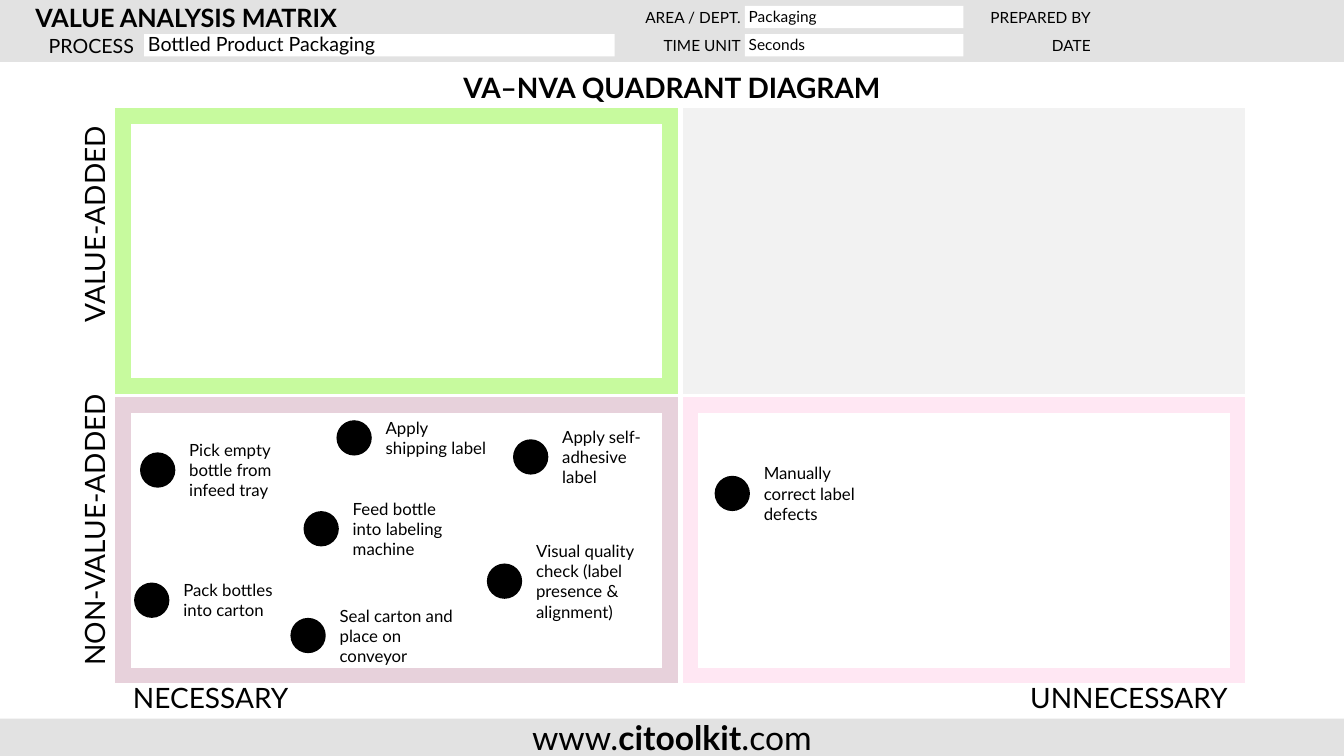
from dataclasses import dataclass

from lxml import etree
from pptx import Presentation
from pptx.dml.color import RGBColor
from pptx.enum import shapes, text
from pptx.oxml import ns
from pptx.util import Cm, Pt

LEFT, MID, RIGHT = text.PP_ALIGN.LEFT, text.PP_ALIGN.CENTER, text.PP_ALIGN.RIGHT
RECT, OVAL = shapes.MSO_SHAPE.RECTANGLE, shapes.MSO_SHAPE.OVAL


@dataclass(frozen=True)
class Theme:
    font: str = "Lato"
    ink: str = "000000"
    paper: str = "FFFFFF"
    band: str = "E2E2E2"
    green: str = "C7FA9E"
    mauve: str = "E7D1DB"
    gray: str = "F2F2F2"
    pink: str = "FFE7F3"
    small: int = 11
    note: int = 12
    body: int = 14
    title: int = 18
    head: int = 20
    site: int = 24
    edge: int = 11


T = Theme()
WIDE, HIGH = 33.87, 19.05
FLAT = (0.1, 0)
SNUG = (0.1, 0.1)
CELL_W, CELL_H = 13.79, 6.81
STEP_X, STEP_Y = 14.3, 7.29
DOT = 0.89
ROW = 1.12

STEPS = [
    ("Manually correct label defects", 14.91, 9.07, 2.9),
    ("Pack bottles into carton", 0.28, 11.76, 2.51),
    ("Pick empty bottle from infeed tray", 0.43, 8.48, 2.67),
    ("Feed bottle into labeling machine", 4.55, 9.96, 2.95),
    ("Seal carton and place on conveyor", 4.22, 12.65, 3.18),
    ("Visual quality check (label presence & alignment)", 9.17, 11.28, 3.43),
    ("Apply self-adhesive label", 9.83, 8.15, 2.67),
    ("Apply shipping label", 5.38, 7.67, 2.74),
]


def block(parts, kind, box, fill, edge=None):
    shape = parts.add_shape(kind, *map(Cm, box))
    shape.shadow.inherit = False
    shape.fill.solid()
    shape.fill.fore_color.rgb = RGBColor.from_string(fill)
    if edge:
        shape.line.color.rgb = RGBColor.from_string(edge)
        shape.line.width = Pt(T.edge)
        line = shape.element.spPr.find(ns.qn("a:ln"))
        etree.SubElement(line, ns.qn("a:miter")).set("lim", "800000")
    else:
        shape.line.fill.background()
    return shape


def write(parts, box, words, size, bold=False, align=LEFT, inset=(0.25, 0.13),
          turn=0, space=None):
    label = parts.add_textbox(*map(Cm, box))
    label.rotation = turn
    frame = label.text_frame
    frame.word_wrap = True
    frame.vertical_anchor = text.MSO_ANCHOR.MIDDLE
    frame.margin_left = frame.margin_right = Cm(inset[0])
    frame.margin_top = frame.margin_bottom = Cm(inset[1])
    para = frame.paragraphs[0]
    para.alignment = align
    if space:
        para.line_spacing = space
    runs = [(words, bold)] if isinstance(words, str) else words
    for word, heavy in runs:
        run = para.add_run()
        run.text = word
        run.font.name = T.font
        run.font.size = Pt(size)
        run.font.bold = heavy
        run.font.color.rgb = RGBColor.from_string(T.ink)
    return label


def header(parts, box):
    x, y = box[:2]
    block(parts, RECT, box, T.band)
    write(parts, (x + 0.79, y, 14.71, 0.86), "VALUE ANALYSIS MATRIX", T.title,
          bold=True, inset=SNUG)
    rows = (0.14, 0.85)
    fields = [
        ("PROCESS", "Bottled Product Packaging", 0.38, 1, 3.63, 11.86, T.body),
        ("AREA / DEPT.", "Packaging", 15.67, 0, 18.77, 5.51, T.small),
        ("TIME UNIT", "Seconds", 15.67, 1, 18.77, 5.51, T.small),
        ("PREPARED BY", "", 24.49, 0, 0, 0, T.small),
        ("DATE", "", 24.49, 1, 0, 0, T.small),
    ]
    for name, value, left, row, start, width, size in fields:
        top = y + rows[row]
        write(parts, (x + left, top, 3.1, 0.58), name, size,
              align=RIGHT, inset=SNUG)
        if value:
            slot = (x + start, top + 0.01, width, 0.56)
            block(parts, RECT, slot, T.paper)
            write(parts, slot, value, size, inset=SNUG, space=0.9)


def footer(parts, box):
    block(parts, RECT, box, T.band)
    write(parts, box, [("www.", False), ("citoolkit", True), (".com", False)],
          T.site, align=MID)


def upright(parts, mid, top, size, words, align):
    box = (mid - size / 2, top + (size - ROW) / 2, size, ROW)
    write(parts, box, words, T.head, align=align, turn=270)


def axes(parts, box):
    x, y, w, h = box
    base, mid, span = y + h, x - 0.73, 8
    write(parts, (x, base, span, ROW), "NECESSARY", T.head)
    write(parts, (x + w - span, base, span, ROW), "UNNECESSARY", T.head,
          align=RIGHT)
    upright(parts, mid, y, 6.5, "VALUE-ADDED", RIGHT)
    upright(parts, mid, base - span, span, "NON-VALUE-ADDED", LEFT)


def step(parts, x, y, words, width):
    group = parts.add_group_shape().shapes
    high = 1.8
    write(group, (x + 1.14, y + (DOT - high) / 2, width, high), words, T.note,
          inset=FLAT)
    block(group, OVAL, (x, y, DOT, DOT), T.ink)


def matrix(parts, box):
    x, y = box[:2]
    axes(parts, box)
    cells = [(T.paper, T.green), (T.gray, T.gray),
             (T.paper, T.mauve), (T.paper, T.pink)]
    for i, (fill, edge) in enumerate(cells):
        row, col = divmod(i, 2)
        spot = (x + col * STEP_X, y + row * STEP_Y, CELL_W, CELL_H)
        block(parts, RECT, spot, fill, edge)
    for words, left, top, width in STEPS:
        step(parts, x + left, y + top, words, width)


def main():
    deck = Presentation()
    deck.slide_width, deck.slide_height = Cm(WIDE), Cm(HIGH)
    parts = deck.slides.add_slide(deck.slide_layouts[6]).shapes
    footer(parts, (0, 18.11, WIDE, 0.94))
    header(parts, (0, 0, WIDE, 1.56))
    write(parts, (0, 1.63, WIDE, ROW), "VA–NVA QUADRANT DIAGRAM", T.head,
          bold=True, align=MID)
    matrix(parts, (3.1, 2.92, STEP_X + CELL_W, STEP_Y + CELL_H))
    deck.save("out.pptx")


if __name__ == "__main__":
    main()
